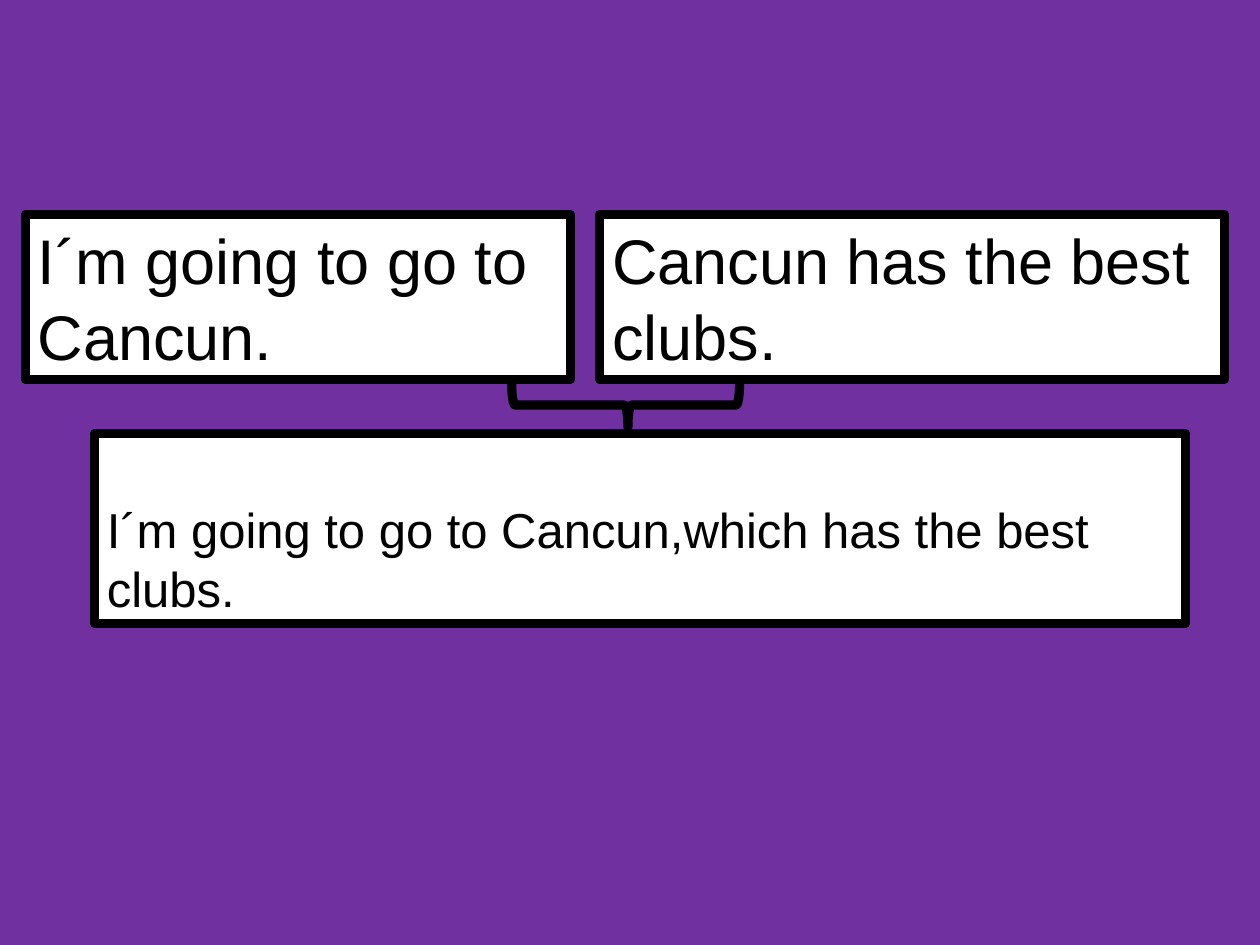
from pptx import Presentation
from pptx.dml.color import RGBColor
from pptx.enum.shapes import MSO_SHAPE
from pptx.enum.text import MSO_ANCHOR, MSO_AUTO_SIZE, PP_ALIGN
from pptx.util import Inches, Pt

PURPLE = RGBColor(0x70, 0x30, 0xA0)
WHITE = RGBColor(0xFF, 0xFF, 0xFF)
BLACK = RGBColor(0x00, 0x00, 0x00)
RIGHT_BRACE = MSO_SHAPE.RIGHT_BRACE
BOTTOM = MSO_ANCHOR.BOTTOM
FIXED_SIZE = MSO_AUTO_SIZE.NONE
LEFT = PP_ALIGN.LEFT
BLANK_LAYOUT = 6


class SentenceSlide:
    """Holds the slide and the style shared by its parts."""

    font_name = "Arial"
    outline_width = Pt(5.25)

    def __init__(self, prs):
        self.slide = prs.slides.add_slide(prs.slide_layouts[BLANK_LAYOUT])
        background = self.slide.background.fill
        background.solid()
        background.fore_color.rgb = PURPLE

    def outline(self, shape):
        shape.line.color.rgb = BLACK
        shape.line.width = self.outline_width

    def sentence(self, text, left, top, width, height, size):
        box = self.slide.shapes.add_textbox(
            Inches(left), Inches(top), Inches(width), Inches(height))
        box.fill.solid()
        box.fill.fore_color.rgb = WHITE
        self.outline(box)
        frame = box.text_frame
        frame.word_wrap = True
        frame.auto_size = FIXED_SIZE
        frame.vertical_anchor = BOTTOM
        frame.text = text
        paragraph = frame.paragraphs[0]
        paragraph.alignment = LEFT
        font = paragraph.runs[0].font
        font.name = self.font_name
        font.size = Pt(size)
        font.color.rgb = BLACK

    def brace(self, left, top, width, height, curve, point):
        brace = self.slide.shapes.add_shape(
            RIGHT_BRACE, Inches(left), Inches(top), Inches(width), Inches(height))
        brace.rotation = 90
        brace.adjustments[0] = curve
        brace.adjustments[1] = point
        brace.fill.background()
        brace.shadow.inherit = False
        self.outline(brace)


def main():
    prs = Presentation()
    prs.slide_width, prs.slide_height = Inches(10), Inches(7.5)
    page = SentenceSlide(prs)

    # Two simple sentences side by side
    for text, left, width in (
        ("I´m going to go to Cancun.", 0.2, 4.33),
        ("Cancun has the best clubs.", 4.76, 4.96),
    ):
        page.sentence(text, left, 1.7, width, 1.31, size=36)

    # Combined sentence with the relative clause
    page.sentence("I´m going to go to Cancun,which has the best clubs.",
                  0.75, 3.44, 8.66, 1.51, size=28)

    # Brace joining the simple sentences to the combined one
    page.brace(4.79, 2.31, 0.35, 1.81, curve=0.08, point=0.49)

    prs.save("out.pptx")


if __name__ == "__main__":
    main()
